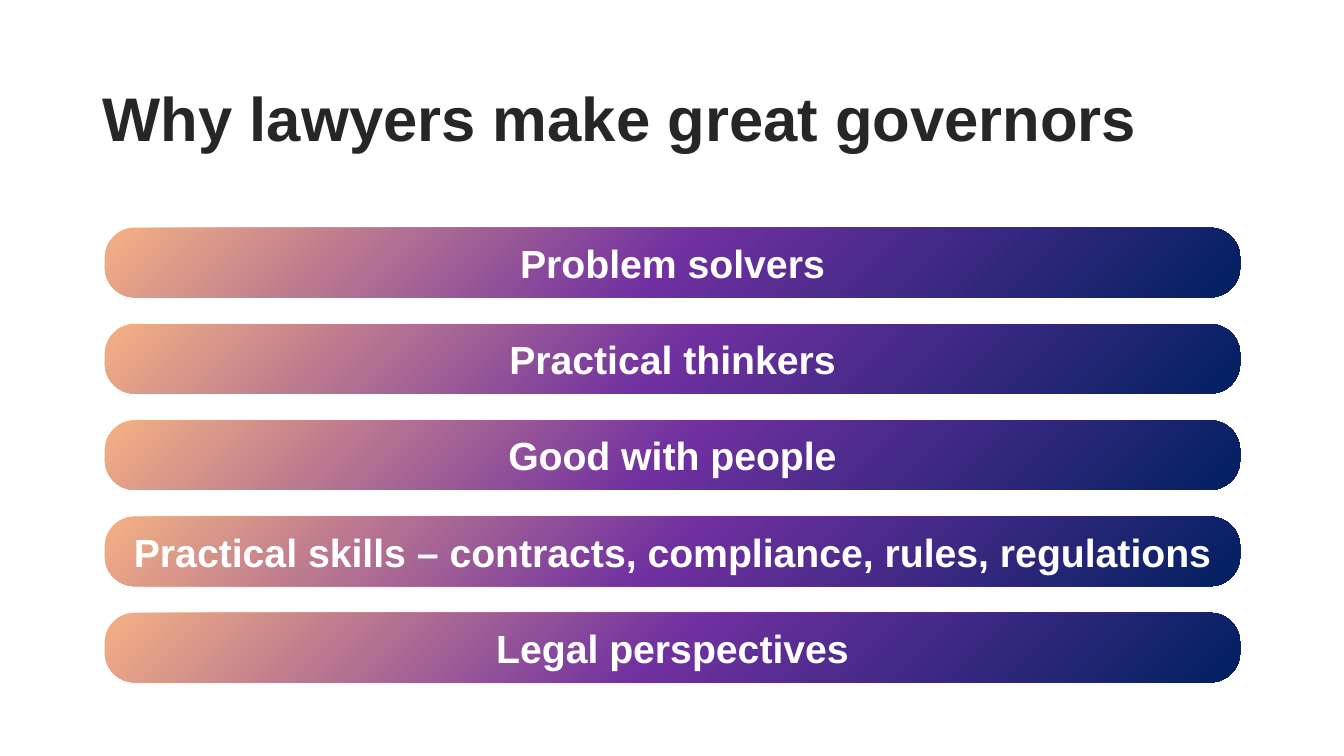
"""Build the slide on why lawyers make great governors."""
from copy import deepcopy

from pptx import Presentation
from pptx.dml.color import RGBColor
from pptx.enum.shapes import MSO_SHAPE
from pptx.enum.text import MSO_ANCHOR, PP_ALIGN
from pptx.oxml.ns import qn
from pptx.util import Inches, Pt

ROUND = MSO_SHAPE.ROUNDED_RECTANGLE
MIDDLE = MSO_ANCHOR.MIDDLE
LEFT, CENTER = PP_ALIGN.LEFT, PP_ALIGN.CENTER

TITLE = "Why lawyers make great governors"
TRAITS = [
    "Problem solvers",
    "Practical thinkers",
    "Good with people",
    "Practical skills – contracts, compliance, rules, regulations",
    "Legal perspectives",
]
COLORS = {"ink": "262626", "white": "FFFFFF",
          "peach": "F4B183", "purple": "7030A0", "navy": "002060"}
STOPS = [(0, "peach"), (0.5, "purple"), (1, "navy")]
FONT = "Arial"
BAR_X, BAR_Y, BAR_W, BAR_H = 1.04, 2.26, 11.26, 0.69
STEP = 0.955
CURVE = 0.43


def color(name):
    return RGBColor.from_string(COLORS[name])


def write(shape, text, size=28, ink="white", align=CENTER, line=1, after=0):
    frame = shape.text_frame
    frame.word_wrap = True
    frame.vertical_anchor = MIDDLE
    para = frame.paragraphs[0]
    para.alignment = align
    para.line_spacing = line
    para.space_after = Pt(after)
    run = para.add_run()
    run.text = text
    run.font.name = FONT
    run.font.size = Pt(size)
    run.font.bold = True
    run.font.color.rgb = color(ink)


def blend(shape):
    fill = shape.fill
    fill.gradient()
    fill.gradient_angle = 315
    marks = shape._element.spPr.find(qn("a:gradFill")).find(qn("a:gsLst"))
    marks.append(deepcopy(marks[0]))
    for stop, (place, name) in zip(fill.gradient_stops, STOPS):
        stop.position = place
        stop.color.rgb = color(name)


def add_bar(slide, row, text):
    bar = slide.shapes.add_shape(ROUND, Inches(BAR_X), Inches(BAR_Y + row * STEP),
                                 Inches(BAR_W), Inches(BAR_H))
    bar.adjustments[0] = CURVE
    bar.shadow.inherit = False
    bar.line.fill.background()
    blend(bar)
    write(bar, text, after=3 if row < len(TRAITS) - 1 else 0)


def main():
    deck = Presentation()
    deck.slide_width, deck.slide_height = Inches(13.33), Inches(7.5)
    slide = deck.slides.add_slide(deck.slide_layouts[5])
    title = slide.shapes.title
    title.left, title.top = Inches(0.92), Inches(0.48)
    title.width, title.height = Inches(11.5), Inches(1.45)
    write(title, TITLE, size=44, ink="ink", align=LEFT, line=0.9)
    for row, text in enumerate(TRAITS):
        add_bar(slide, row, text)
    deck.save("out.pptx")


if __name__ == "__main__":
    main()
